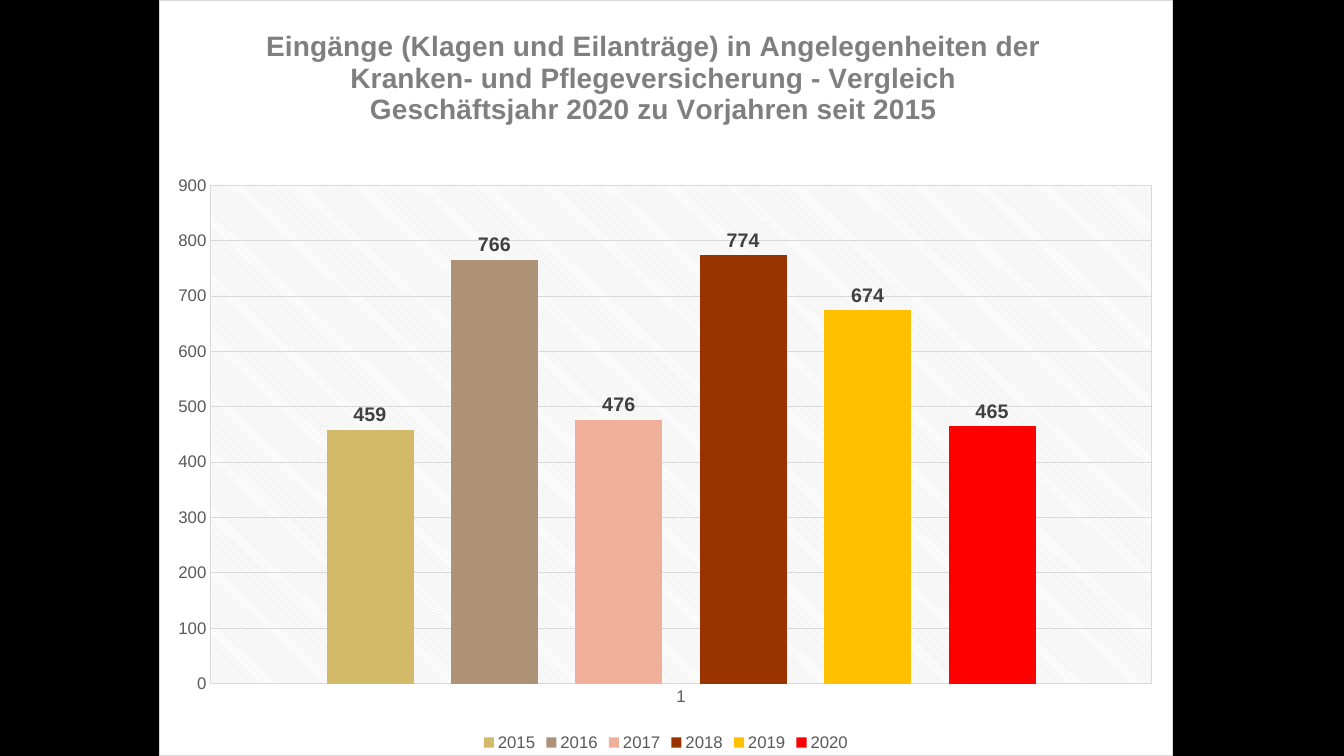
from lxml import etree
from pptx import Presentation
from pptx.chart.data import CategoryChartData
from pptx.dml.color import RGBColor
from pptx.enum.chart import XL_CHART_TYPE, XL_LABEL_POSITION, XL_LEGEND_POSITION, XL_TICK_MARK
from pptx.oxml import parse_xml
from pptx.oxml.ns import nsdecls, qn
from pptx.util import Inches, Pt

COLUMNS = XL_CHART_TYPE.COLUMN_CLUSTERED
OUTSIDE_END = XL_LABEL_POSITION.OUTSIDE_END
BOTTOM = XL_LEGEND_POSITION.BOTTOM
NO_TICK = XL_TICK_MARK.NONE

FONT = "Arial"
COLORS = {
    "background": "000000", "paper": "FFFFFF", "grid": "D9D9D9",
    "title": "7F7F7F", "axis": "595959", "label": "404040",
}
TITLE = ("Eingänge (Klagen und Eilanträge) in Angelegenheiten der "
         "Kranken- und Pflegeversicherung - Vergleich "
         "Geschäftsjahr 2020 zu Vorjahren seit 2015")
# Year, number of cases, column colour
CASES = [
    ("2015", 459, "D3BA68"), ("2016", 766, "AD9277"), ("2017", 476, "F0AF98"),
    ("2018", 774, "993300"), ("2019", 674, "FFC000"), ("2020", 465, "FF0000"),
]


def rgb(name):
    return RGBColor.from_string(COLORS[name])


def style_font(font, size, color, bold=False):
    font.name = FONT
    font.size = Pt(size)
    font.bold = bold
    font.color.rgb = rgb(color)


def style_line(line, color):
    line.color.rgb = rgb(color)
    line.width = Pt(0.75)


def place(part, index, **fractions):
    """Position a chart part by fractions of the chart area."""
    layout = part.find(qn("c:layout"))
    if layout is None:
        layout = etree.Element(qn("c:layout"))
        part.insert(index, layout)
    manual = etree.SubElement(layout, qn("c:manualLayout"))
    if "w" in fractions:
        etree.SubElement(manual, qn("c:layoutTarget")).set("val", "inner")
    for axis in "xy":
        etree.SubElement(manual, qn(f"c:{axis}Mode")).set("val", "edge")
    for key, value in fractions.items():
        etree.SubElement(manual, qn(f"c:{key}")).set("val", str(value))


def area_format(fill):
    """Fill plus thin grey border for the chart or plot area."""
    return parse_xml(
        f'<c:spPr {nsdecls("c", "a")}>{fill}<a:ln w="9525"><a:solidFill>'
        f'<a:srgbClr val="{COLORS["grid"]}"/></a:solidFill></a:ln></c:spPr>')


def format_areas(chart):
    paper = f'<a:srgbClr val="{COLORS["paper"]}"/>'
    hatch = (f'<a:pattFill prst="ltDnDiag"><a:fgClr><a:srgbClr val="{COLORS["grid"]}"/>'
             f'</a:fgClr><a:bgClr>{paper}</a:bgClr></a:pattFill>')
    chart_root = chart.element.find(qn("c:chart"))
    plot_area = chart_root.find(qn("c:plotArea"))
    chart_root.addnext(area_format(f"<a:solidFill>{paper}</a:solidFill>"))
    plot_area.append(area_format(hatch))
    place(plot_area, 0, x=0.05, y=0.245, w=0.93, h=0.66)
    place(chart_root.find(qn("c:title")), 1, x=0.1, y=0.03)


def add_cases_chart(slide, left, top, width, height):
    data = CategoryChartData()
    data.categories = ["1"]
    for year, count, _ in CASES:
        data.add_series(year, [count])
    chart = slide.shapes.add_chart(COLUMNS, left, top, width, height, data).chart
    style_font(chart.font, 12, "axis")

    # Title
    chart.has_title = True
    heading = chart.chart_title.text_frame
    heading.text = TITLE
    style_font(heading.paragraphs[0].font, 20, "title", bold=True)

    # Legend
    chart.has_legend = True
    chart.legend.position = BOTTOM
    chart.legend.include_in_layout = False
    style_font(chart.legend.font, 12, "axis")

    # Axes
    for axis in (chart.category_axis, chart.value_axis):
        axis.major_tick_mark = axis.minor_tick_mark = NO_TICK
        axis.has_major_gridlines = True
        style_line(axis.major_gridlines.format.line, "grid")
        style_font(axis.tick_labels.font, 12, "axis")
    style_line(chart.category_axis.format.line, "grid")
    counts = chart.value_axis
    counts.format.line.fill.background()
    counts.minimum_scale, counts.maximum_scale, counts.major_unit = 0, 900, 100

    # Columns
    plot = chart.plots[0]
    plot.gap_width, plot.overlap, plot.vary_by_categories = 267, -43, False
    for column, (_, _, color) in zip(plot.series, CASES):
        column.format.fill.solid()
        column.format.fill.fore_color.rgb = RGBColor.from_string(color)
        labels = column.data_labels
        labels.show_value = True
        labels.position = OUTSIDE_END
        style_font(labels.font, 14, "label", bold=True)

    format_areas(chart)


def main():
    prs = Presentation()
    prs.slide_width, prs.slide_height = Inches(13.33), Inches(7.5)
    slide = prs.slides.add_slide(prs.slide_layouts[6])
    slide.background.fill.solid()
    slide.background.fill.fore_color.rgb = rgb("background")
    add_cases_chart(slide, Inches(1.58), 0, Inches(10.05), prs.slide_height)
    prs.save("out.pptx")


if __name__ == "__main__":
    main()
